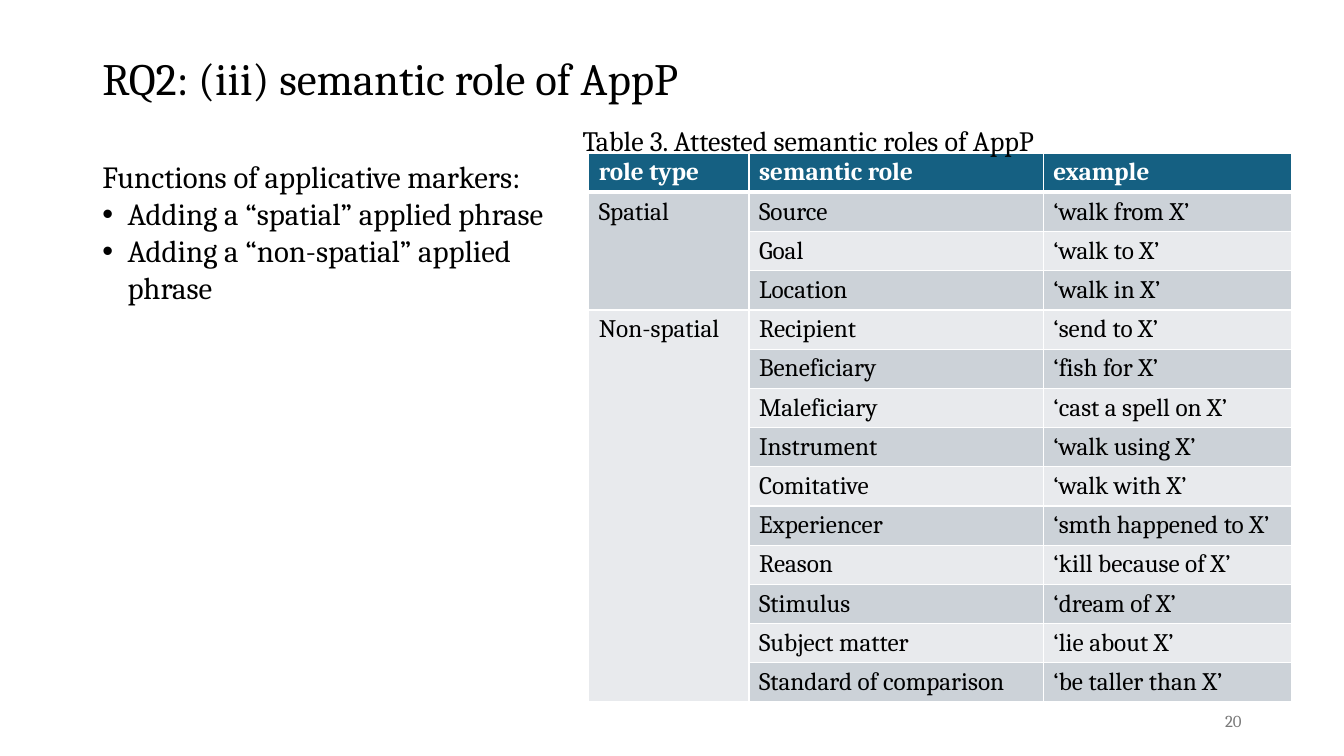
from dataclasses import dataclass

from lxml import etree
from pptx import Presentation
from pptx.dml.color import RGBColor
from pptx.enum.text import MSO_ANCHOR, PP_ALIGN
from pptx.oxml.ns import qn
from pptx.util import Pt

FONT = "Cambria"
COLORS = {
    "text": "000000",
    "header": "156082",
    "white": "FFFFFF",
    "dark band": "CCD2D8",
    "light band": "E8EAED",
    "number": "797979",
}
TOP, MIDDLE = MSO_ANCHOR.TOP, MSO_ANCHOR.MIDDLE
LEFT, RIGHT = PP_ALIGN.LEFT, PP_ALIGN.RIGHT
BULLET_INDENT = 18
ROW_HEIGHT = 28
COLUMN_WIDTHS = (114.5, 210.2, 177.1)
HEADERS = ("role type", "semantic role", "example")


@dataclass
class TextBlock:
    left: float
    top: float
    width: float
    height: float
    lines: tuple[str, ...]
    size: float
    color: str = "text"
    anchor: MSO_ANCHOR = TOP
    align: PP_ALIGN = LEFT
    line_spacing: float = 1.0
    bullets_from: int = 1


@dataclass
class Role:
    name: str
    example: str


TEXT_BLOCKS = (
    TextBlock(66, 28.8, 828, 57.6, ("RQ2: (iii) semantic role of AppP",), 32,
              anchor=MIDDLE, line_spacing=0.9),
    TextBlock(66, 109.4, 354.2, 424.8,
              ("Functions of applicative markers:",
               "Adding a “spatial” applied phrase",
               "Adding a “non-spatial” applied phrase"), 22),
    TextBlock(409, 85, 467.3, 31.7, ("Table 3. Attested semantic roles of AppP",), 20),
    TextBlock(678, 500.4, 216, 28.8, ("20",), 12, "number", MIDDLE, RIGHT),
)

ROLES_BY_TYPE = {
    "Spatial": (
        Role("Source", "‘walk from X’"),
        Role("Goal", "‘walk to X’"),
        Role("Location", "‘walk in X’"),
    ),
    "Non-spatial": (
        Role("Recipient", "‘send to X’"),
        Role("Beneficiary", "‘fish for X’"),
        Role("Maleficiary", "‘cast a spell on X’"),
        Role("Instrument", "‘walk using X’"),
        Role("Comitative", "‘walk with X’"),
        Role("Experiencer", "‘smth happened to X’"),
        Role("Reason", "‘kill because of X’"),
        Role("Stimulus", "‘dream of X’"),
        Role("Subject matter", "‘lie about X’"),
        Role("Standard of comparison", "‘be taller than X’"),
    ),
}


def format_runs(paragraph, size: float, color: str, bold: bool = False) -> None:
    for run in paragraph.runs:
        run.font.name = FONT
        run.font.size = Pt(size)
        run.font.bold = bold
        run.font.color.rgb = RGBColor.from_string(COLORS[color])


def add_bullet(paragraph) -> None:
    properties = paragraph._p.get_or_add_pPr()
    properties.set("marL", str(Pt(BULLET_INDENT)))
    properties.set("indent", str(-Pt(BULLET_INDENT)))
    etree.SubElement(properties, qn("a:buFont")).set("typeface", "Arial")
    etree.SubElement(properties, qn("a:buChar")).set("char", "•")


def add_text(slide, block: TextBlock) -> None:
    shape = slide.shapes.add_textbox(
        Pt(block.left), Pt(block.top), Pt(block.width), Pt(block.height))
    text_frame = shape.text_frame
    text_frame.word_wrap = True
    text_frame.vertical_anchor = block.anchor
    text_frame.text = "\n".join(block.lines)
    for index, paragraph in enumerate(text_frame.paragraphs):
        paragraph.alignment = block.align
        paragraph.line_spacing = block.line_spacing
        format_runs(paragraph, block.size, block.color)
        if index >= block.bullets_from:
            add_bullet(paragraph)


def add_borders(cell, bottom_width: float) -> None:
    properties = cell._tc.get_or_add_tcPr()
    for side, width in (("L", 1), ("R", 1), ("T", 1), ("B", bottom_width)):
        line = etree.SubElement(properties, qn(f"a:ln{side}"), w=str(Pt(width)))
        fill = etree.SubElement(line, qn("a:solidFill"))
        etree.SubElement(fill, qn("a:srgbClr"), val=COLORS["white"])


def fill_cell(cell, text: str, fill: str, is_header: bool) -> None:
    add_borders(cell, 3 if is_header else 1)
    cell.fill.solid()
    cell.fill.fore_color.rgb = RGBColor.from_string(COLORS[fill])
    cell.text_frame.text = text
    format_runs(cell.text_frame.paragraphs[0], 18,
                "white" if is_header else "text", is_header)


def add_role_table(slide) -> None:
    rows = [HEADERS]
    spans = []
    for role_type, roles in ROLES_BY_TYPE.items():
        spans.append((len(rows), len(rows) + len(roles) - 1))
        for index, role in enumerate(roles):
            rows.append(("" if index else role_type, role.name, role.example))

    table = slide.shapes.add_table(
        len(rows), len(HEADERS), Pt(420.5), Pt(109.4),
        Pt(sum(COLUMN_WIDTHS)), Pt(ROW_HEIGHT * len(rows))).table
    for column, width in zip(table.columns, COLUMN_WIDTHS):
        column.width = Pt(width)
    for row_index, texts in enumerate(rows):
        table.rows[row_index].height = Pt(ROW_HEIGHT)
        band = "dark band" if row_index % 2 else "light band"
        is_header = row_index == 0
        for column_index, text in enumerate(texts):
            fill_cell(table.cell(row_index, column_index), text,
                      "header" if is_header else band, is_header)
    for first, last in spans:
        table.cell(first, 0).merge(table.cell(last, 0))


def main() -> None:
    presentation = Presentation()
    presentation.slide_width = Pt(960)
    presentation.slide_height = Pt(540)
    slide = presentation.slides.add_slide(presentation.slide_layouts[6])
    add_role_table(slide)
    for block in TEXT_BLOCKS:
        add_text(slide, block)
    presentation.save("out.pptx")


if __name__ == "__main__":
    main()
